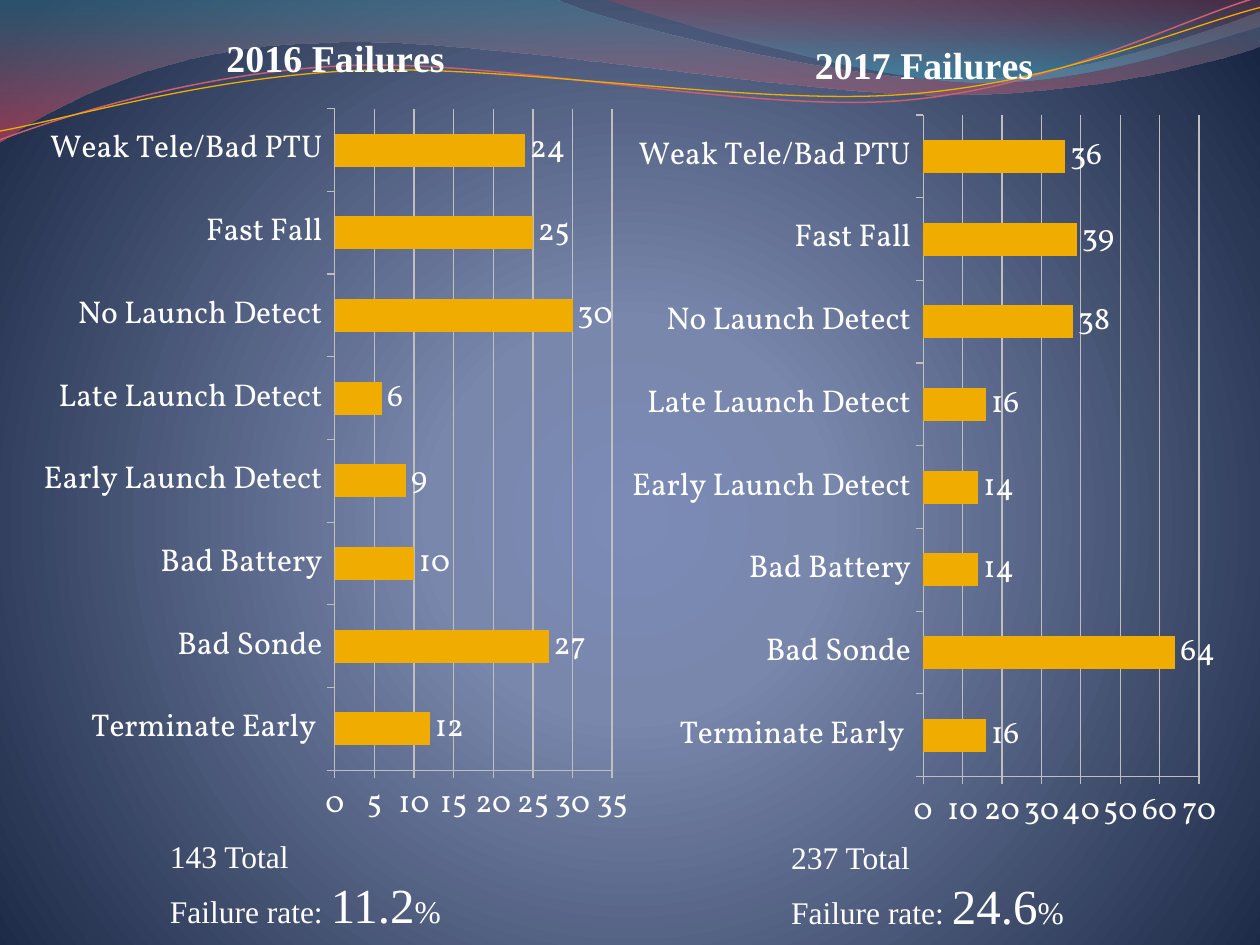
import math

import lxml.etree
import pptx
import pptx.chart.data
import pptx.dml.color
import pptx.enum.chart
import pptx.enum.text
import pptx.oxml
import pptx.oxml.ns
import pptx.util
from pptx.util import Inches

RGBColor = pptx.dml.color.RGBColor
qn = pptx.oxml.ns.qn
WHITE = RGBColor(0xFF, 0xFF, 0xFF)
GOLD = RGBColor(0xF0, 0xAD, 0x00)
ROSE = RGBColor(0xCB, 0x5F, 0x6E)
GRID = RGBColor(0xBF, 0xBF, 0xBF)
TEAL = RGBColor(0x3F, 0x8A, 0x9F)
RED = RGBColor(0xEF, 0x44, 0x5B)
WINE = RGBColor(0xB8, 0x42, 0x53)
SKY = RGBColor(0x42, 0xAB, 0xC7)
GLOW = RGBColor(0x7B, 0x8B, 0xB6)
HAZE = RGBColor(0x79, 0x87, 0xAC)
NIGHT = RGBColor(0x19, 0x26, 0x43)

CAUSES = ["Terminate Early ", "Bad Sonde", "Bad Battery", "Early Launch Detect",
          "Late Launch Detect", "No Launch Detect", "Fast Fall", "Weak Tele/Bad PTU"]

# Each outline is a start point, then line ends (2 numbers) or Bézier curves (6 numbers).
LEFT_WAVE = [(0, 0), (4.4, -0.01), (4.76, 0.17, 6.64, 0.63, 7.58, 0.63),
             (8.53, 0.63, 9.58, 0.26, 10, 0.09), (10.01, 0.36),
             (9.83, 0.44, 8.7, 0.76, 7.46, 0.75), (6.22, 0.75, 3.82, 0.28, 2.57, 0.34),
             (1.29, 0.36, 0.46, 0.83, -0.01, 1.13), (0, 0)]
RIGHT_WAVE = [(4.79, -0.01), (5.09, 0.11, 6.82, 0.62, 7.69, 0.65),
              (8.56, 0.69, 9.61, 0.32, 10, 0.21), (10, 0), (4.79, -0.01)]
ROSE_CURVE = [(0, 1.11), (0.48, 0.93, 1.58, 0.57, 2.77, 0.52),
              (3.95, 0.47, 5.93, 0.89, 7.13, 0.8), (8.33, 0.71, 9.38, 0.15, 9.98, -0.02)]
GOLD_CURVE = [(0, 1.04), (0.47, 0.96, 1.64, 0.61, 2.83, 0.56),
              (4.03, 0.51, 5.97, 0.84, 7.17, 0.75), (8.36, 0.67, 9.41, 0.21, 10, 0.06)]
CURVE_TILT = -2.7


def turn(point, center, degrees):
    angle = math.radians(degrees)
    dx, dy = point[0] - center[0], point[1] - center[1]
    return (center[0] + dx * math.cos(angle) - dy * math.sin(angle),
            center[1] + dx * math.sin(angle) + dy * math.cos(angle))


def gradient(stops, direction):
    """Gradient fill from (position %, colour, opacity %) stops."""
    stop_xml = "".join(
        f'<a:gs pos="{position * 1000}"><a:srgbClr val="{color}">'
        f'<a:alpha val="{opacity * 1000}"/></a:srgbClr></a:gs>'
        for position, color, opacity in stops)
    return pptx.oxml.parse_xml(
        f'<a:gradFill {pptx.oxml.ns.nsdecls("a")} rotWithShape="1">'
        f'<a:gsLst>{stop_xml}</a:gsLst>{direction}</a:gradFill>')


class FailureSlide:
    serif = "Times New Roman"
    chart_font = "Vollkorn"
    size = 18
    big = 28

    def __init__(self, deck):
        self.slide = deck.slides.add_slide(deck.slide_layouts[6])

    def background(self, stops):
        self.slide.background.fill.solid()
        solid = self.slide.element.find(".//" + qn("p:bgPr"))[0]
        radial = ('<a:path path="circle">'
                  '<a:fillToRect l="10000" t="110000" r="10000" b="100000"/></a:path>')
        solid.getparent().replace(solid, gradient(stops, radial))

    def outline(self, segments, center=(0, 0), tilt=0):
        """Freeform whose three-point segments become Bézier curves."""
        points = [turn(segment[i:i + 2], center, -tilt)
                  for segment in segments for i in range(0, len(segment), 2)]
        points = [(Inches(x), Inches(y)) for x, y in points]
        builder = self.slide.shapes.build_freeform(*points[0], scale=1.0)
        builder.add_line_segments(points[1:], close=False)
        shape = builder.convert_to_shape()
        shape.shadow.inherit = False
        shape.rotation = tilt

        path = shape.element.find(".//" + qn("a:path"))
        steps = iter(path.findall(qn("a:lnTo")))
        for segment in segments[1:]:
            first = next(steps)
            if len(segment) == 6:
                first.tag = qn("a:cubicBezTo")
                for _ in range(2):
                    step = next(steps)
                    first.append(step[0])
                    path.remove(step)
        if segments[0] == segments[-1]:
            lxml.etree.SubElement(path, qn("a:close"))
        return shape

    def wave(self, segments, stops):
        shape = self.outline(segments)
        shape.line.fill.background()
        shape.fill.solid()
        solid = shape.element.spPr.find(qn("a:solidFill"))
        solid.getparent().replace(solid, gradient(stops, '<a:lin ang="5400000" scaled="0"/>'))

    def curve(self, segments, center, color, width):
        shape = self.outline(segments, center, CURVE_TILT)
        shape.fill.background()
        shape.line.color.rgb = color
        shape.line.width = pptx.util.Pt(width)

    def style(self, font, size, name):
        font.size = pptx.util.Pt(size)
        font.name = name
        font.color.rgb = WHITE

    def bar_chart(self, left, top, heading, counts):
        data = pptx.chart.data.CategoryChartData()
        data.categories = CAUSES
        data.add_series("Series 1", counts)
        chart = self.slide.shapes.add_chart(
            pptx.enum.chart.XL_CHART_TYPE.BAR_CLUSTERED, Inches(left), Inches(top),
            Inches(4.83), Inches(6.67), data).chart
        self.style(chart.font, self.size, self.chart_font)
        chart.has_legend = False

        chart.has_title = True
        title = chart.chart_title.text_frame.paragraphs[0].add_run()
        title.text = heading
        self.style(title.font, 21.6, self.serif)
        title.font.bold = True
        chart.chart_title.include_in_layout = False

        for axis in (chart.category_axis, chart.value_axis):
            axis.major_tick_mark = pptx.enum.chart.XL_TICK_MARK.OUTSIDE
            axis.format.line.color.rgb = GRID
        chart.value_axis.has_major_gridlines = True
        chart.value_axis.major_gridlines.format.line.color.rgb = GRID

        plot = chart.plots[0]
        plot.gap_width = 150
        plot.vary_by_categories = False
        bars = plot.series[0].format.fill
        bars.solid()
        bars.fore_color.rgb = GOLD
        plot.has_data_labels = True
        labels = plot.data_labels
        labels.show_value = True
        labels.position = pptx.enum.chart.XL_LABEL_POSITION.OUTSIDE_END
        self.style(labels.font, self.size, self.chart_font)

    def summary(self, left, top, total, rate):
        frame = self.slide.shapes.add_textbox(
            Inches(left), Inches(top), Inches(2.42), Inches(0.88)).text_frame
        frame.word_wrap = True
        frame.auto_size = pptx.enum.text.MSO_AUTO_SIZE.SHAPE_TO_FIT_TEXT
        lines = [[(f"{total} Total", self.size)],
                 [("Failure rate: ", self.size), (rate, self.big), ("%", self.size)]]
        for paragraph, runs in zip((frame.paragraphs[0], frame.add_paragraph()), lines):
            for text, size in runs:
                run = paragraph.add_run()
                run.text = text
                self.style(run.font, size, self.serif)


def main():
    deck = pptx.Presentation()
    deck.slide_width, deck.slide_height = Inches(10), Inches(7.5)
    page = FailureSlide(deck)
    page.background([(0, GLOW, 100), (25, HAZE, 100), (100, NIGHT, 100)])
    page.wave(LEFT_WAVE, [(0, TEAL, 45), (100, RED, 55)])
    page.wave(RIGHT_WAVE, [(0, WINE, 30), (80, SKY, 45)])
    page.curve(ROSE_CURVE, (4.99, 0.58), ROSE, 0.85)
    page.curve(GOLD_CURVE, (5, 0.59), GOLD, 0.75)

    page.bar_chart(0.25, 0.03, "2016 Failures", (12, 27, 10, 9, 6, 30, 25, 24))
    page.summary(1.25, 6.59, 143, "11.2")
    page.bar_chart(4.92, 0.08, "2017 Failures", (16, 64, 14, 14, 16, 38, 39, 36))
    page.summary(6.18, 6.6, 237, "24.6")
    deck.save("out.pptx")


if __name__ == "__main__":
    main()
